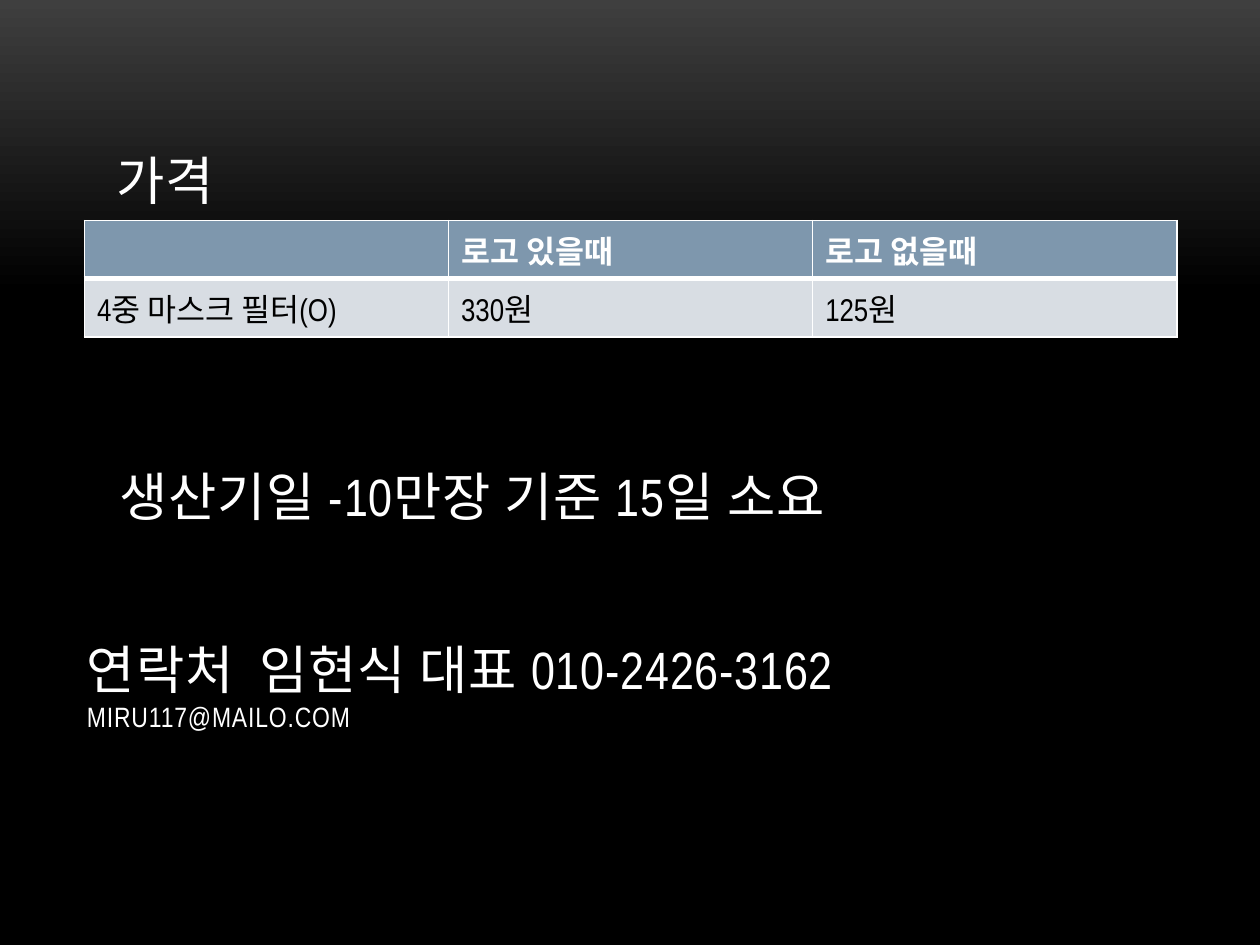
from typing import NamedTuple

from lxml import etree
from pptx import Presentation
from pptx.dml.color import RGBColor
from pptx.enum import text as t
from pptx.oxml.ns import qn
from pptx.util import Inches, Pt

FONT = "Arial Narrow"
COLORS = {
    "white": "FFFFFF",
    "black": "000000",
    "glow": "3F3F3F",
    "head": "7E97AD",
    "body": "D8DDE3",
}
WIDTH = 8.67


class Line(NamedTuple):
    text: str
    size: int = 30


class Block(NamedTuple):
    left: float
    top: float
    height: float
    lines: list[Line]


class Row(NamedTuple):
    cells: list[str]
    fill: str
    ink: str
    bold: bool
    base: int


PRICE = Block(0.83, 0.47, 1.25, [Line("가격")])
TERM = Block(0.85, 3.21, 1.02, [Line("생산기일 -10만장 기준 15일 소요")])
CONTACT = Block(0.59, 4.85, 1.02, [
    Line("연락처  임현식 대표 010-2426-3162"),
    Line("MIRU117@MAILO.COM", 16),
])
ROWS = [
    Row(["", "로고 있을때", "로고 없을때"], "head", "white", True, 3),
    Row(["4중 마스크 필터(O)", "330원", "125원"], "body", "black", False, 1),
]


def color(name: str) -> RGBColor:
    return RGBColor.from_string(COLORS[name])


def style(run, size: int, ink: str, bold: bool = False) -> None:
    font = run.font
    font.name, font.size, font.bold = FONT, Pt(size), bold
    font.color.rgb = color(ink)


def fill_block(shape, block: Block) -> None:
    """Place a heading shape and set its lines."""
    shape.left, shape.top = Inches(block.left), Inches(block.top)
    shape.width, shape.height = Inches(WIDTH), Inches(block.height)
    frame = shape.text_frame
    frame.word_wrap = True
    frame.auto_size = t.MSO_AUTO_SIZE.NONE
    frame.vertical_anchor = t.MSO_ANCHOR.BOTTOM
    frame.text = "\n".join(line.text for line in block.lines)
    for para, line in zip(frame.paragraphs, block.lines):
        para.alignment = t.PP_ALIGN.LEFT
        for run in para.runs:
            style(run, line.size, "white")
            run._r.get_or_add_rPr().set("spc", "50")


def add_block(slide, block: Block) -> None:
    fill_block(slide.shapes.add_textbox(0, 0, 0, 0), block)


def set_edges(cell, base: int) -> None:
    """Draw white cell borders; base is the width of the bottom one."""
    props = cell._tc.get_or_add_tcPr()
    widths = {"lnL": 1, "lnR": 1, "lnT": 1, "lnB": base}
    for spot, (tag, width) in enumerate(widths.items()):
        edge = etree.Element(qn(f"a:{tag}"), w=str(Pt(width)))
        solid = etree.SubElement(edge, qn("a:solidFill"))
        etree.SubElement(solid, qn("a:srgbClr"), val=COLORS["white"])
        props.insert(spot, edge)


def add_prices(slide) -> None:
    count = len(ROWS[0].cells)
    table = slide.shapes.add_table(
        len(ROWS), count, Inches(0.67), Inches(1.75),
        Inches(WIDTH), Inches(0.41 * len(ROWS))).table
    for y, row in enumerate(ROWS):
        for x, words in enumerate(row.cells):
            cell = table.cell(y, x)
            cell.text = words
            cell.fill.solid()
            cell.fill.fore_color.rgb = color(row.fill)
            set_edges(cell, row.base)
            for run in cell.text_frame.paragraphs[0].runs:
                style(run, 18, row.ink, row.bold)


def paint_back(slide) -> None:
    fill = slide.background.fill
    fill.gradient()
    fill.gradient_angle = 270
    for stop, (place, name) in zip(
            fill.gradient_stops, [(0, "glow"), (0.31, "black")]):
        stop.position = place
        stop.color.rgb = color(name)


def main() -> None:
    deck = Presentation()
    deck.slide_width, deck.slide_height = Inches(10), Inches(7.5)
    slide = deck.slides.add_slide(deck.slide_layouts[5])
    paint_back(slide)
    fill_block(slide.shapes.title, CONTACT)
    add_prices(slide)
    add_block(slide, PRICE)
    add_block(slide, TERM)
    deck.save("out.pptx")


if __name__ == "__main__":
    main()
